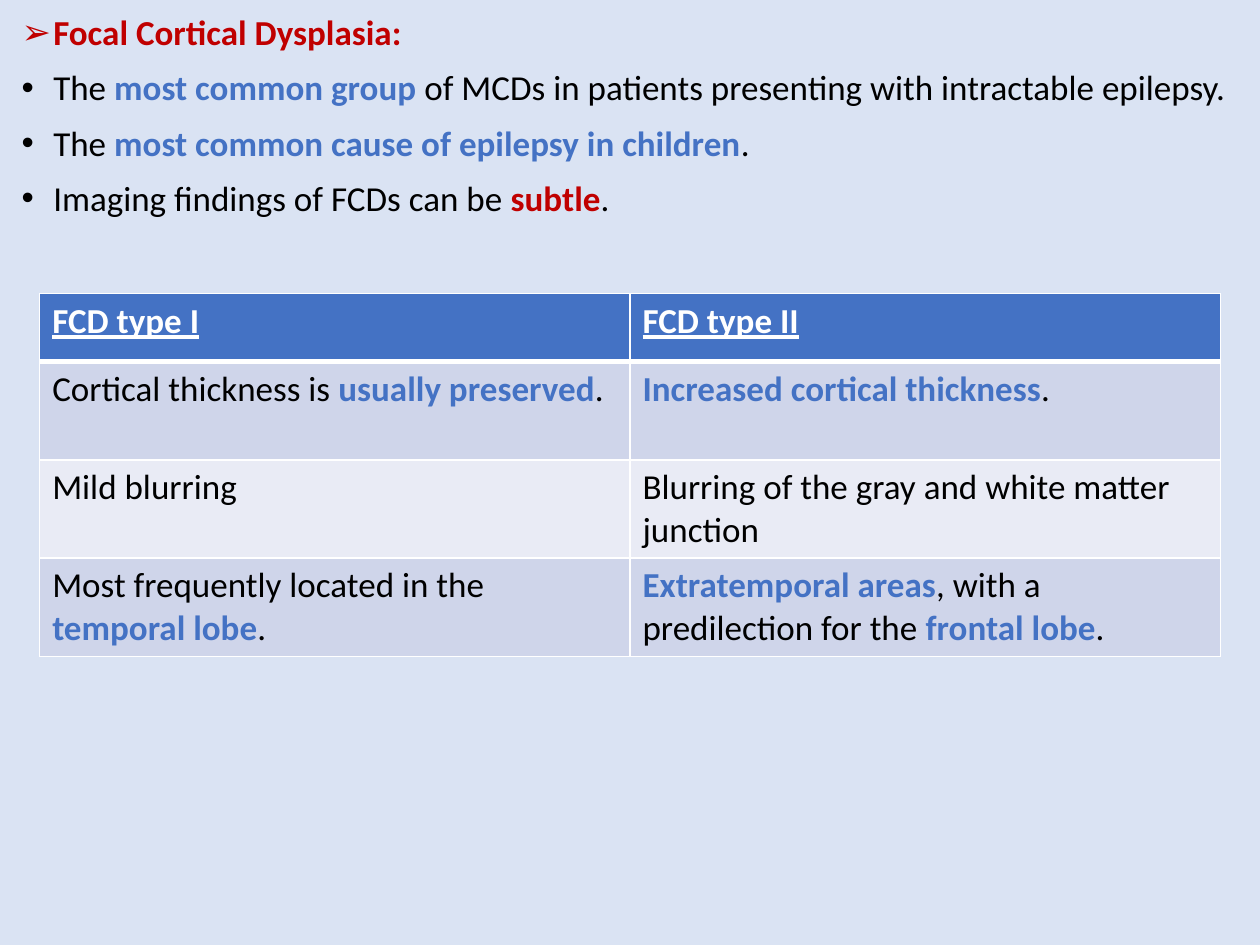
import pptx
import pptx.dml.color
import pptx.enum.text
import pptx.oxml
import pptx.oxml.ns
import pptx.util
from pptx.dml.color import RGBColor
from pptx.util import Cm, Pt

BACKGROUND = RGBColor(0xDA, 0xE3, 0xF3)
BLACK = RGBColor(0x00, 0x00, 0x00)
WHITE = RGBColor(0xFF, 0xFF, 0xFF)
BLUE = RGBColor(0x44, 0x72, 0xC4)
RED = RGBColor(0xC0, 0x00, 0x00)
BAND_DARK = RGBColor(0xCF, 0xD5, 0xEA)
BAND_LIGHT = RGBColor(0xE9, 0xEB, 0xF5)

# Content: each text is a list of (words, colour); coloured words are bold
BULLETS = [
    ("➢", [("Focal Cortical Dysplasia:", RED)]),
    ("•", [("The ", BLACK), ("most common group ", BLUE),
           ("of MCDs in patients presenting with intractable epilepsy.", BLACK)]),
    ("•", [("The ", BLACK), ("most common cause of epilepsy in children", BLUE),
           (".", BLACK)]),
    ("•", [("Imaging findings of FCDs can be ", BLACK), ("subtle", RED), (".", BLACK)]),
]
TABLE_ROWS = [
    [[("FCD type I", WHITE)], [("FCD type II", WHITE)]],
    [[("Cortical thickness is ", BLACK), ("usually preserved", BLUE), (".", BLACK)],
     [("Increased cortical thickness", BLUE), (".", BLACK)]],
    [[("Mild blurring", BLACK)],
     [("Blurring of the gray and white matter junction", BLACK)]],
    [[("Most frequently located in the ", BLACK), ("temporal lobe", BLUE), (".", BLACK)],
     [("Extratemporal areas", BLUE), (", with a predilection for the ", BLACK),
      ("frontal lobe", BLUE), (".", BLACK)]],
]
HEADER_HEIGHT, BODY_HEIGHT = Cm(1.37), Cm(1.98)
COLUMN_WIDTH = Cm(11.9)
INDENT = Cm(0.64)


def add_runs(paragraph, parts, underline=False):
    for words, colour in parts:
        run = paragraph.add_run()
        run.text = words
        run.font.name = "Calibri"
        run.font.size = Pt(20)
        run.font.bold = colour != BLACK
        run.font.underline = underline
        run.font.color.rgb = colour


def add_bullet(paragraph, character):
    properties = paragraph._p.get_or_add_pPr()
    properties.set("marL", str(INDENT))
    properties.set("indent", str(-INDENT))
    namespace = pptx.oxml.ns.nsdecls("a")
    for element in ('buFont %s typeface="Arial"' % namespace,
                    'buChar %s char="%s"' % (namespace, character)):
        properties.append(pptx.oxml.parse_xml("<a:%s/>" % element))


def set_borders(cell, bottom_width):
    properties = cell._tc.get_or_add_tcPr()
    widths = {"lnL": Pt(1), "lnR": Pt(1), "lnT": Pt(1), "lnB": bottom_width}
    for position, (side, width) in enumerate(widths.items()):
        properties.insert(position, pptx.oxml.parse_xml(
            '<a:%s %s w="%d"><a:solidFill><a:srgbClr val="%s"/></a:solidFill></a:%s>'
            % (side, pptx.oxml.ns.nsdecls("a"), width, WHITE, side)))


# Slide
presentation = pptx.Presentation()
presentation.slide_width, presentation.slide_height = Cm(25.4), Cm(19.05)
slide = presentation.slides.add_slide(presentation.slide_layouts[1])
slide.background.fill.solid()
slide.background.fill.fore_color.rgb = BACKGROUND
title = slide.shapes.title
title.element.getparent().remove(title.element)

# Bullet list
body = slide.placeholders[1]
body.left, body.top, body.width, body.height = Cm(0.18), Cm(0.18), Cm(25.04), Cm(18.67)
frame = body.text_frame
frame.word_wrap = True
frame.auto_size = pptx.enum.text.MSO_AUTO_SIZE.NONE
for index, (character, parts) in enumerate(BULLETS):
    paragraph = frame.add_paragraph() if index else frame.paragraphs[0]
    paragraph.line_spacing = 0.9
    paragraph.space_before = Pt(10)
    add_bullet(paragraph, character)
    add_runs(paragraph, parts)

# Comparison table
row_count, column_count = len(TABLE_ROWS), len(TABLE_ROWS[0])
table = slide.shapes.add_table(
    row_count, column_count, Cm(0.8), Cm(5.92), COLUMN_WIDTH * column_count,
    HEADER_HEIGHT + BODY_HEIGHT * (row_count - 1)).table
for column in table.columns:
    column.width = COLUMN_WIDTH
for row_index, row in enumerate(TABLE_ROWS):
    is_header = row_index == 0
    table.rows[row_index].height = HEADER_HEIGHT if is_header else BODY_HEIGHT
    band = BAND_DARK if row_index % 2 else BAND_LIGHT
    for column_index, parts in enumerate(row):
        cell = table.cell(row_index, column_index)
        cell.fill.solid()
        cell.fill.fore_color.rgb = BLUE if is_header else band
        set_borders(cell, Pt(3) if is_header else Pt(1))
        if row_index == 1:  # share the header's thick rule
            cell._tc.tcPr.find(pptx.oxml.ns.qn("a:lnT")).set("w", str(Pt(3)))
        add_runs(cell.text_frame.paragraphs[0], parts, underline=is_header)

presentation.save("out.pptx")
